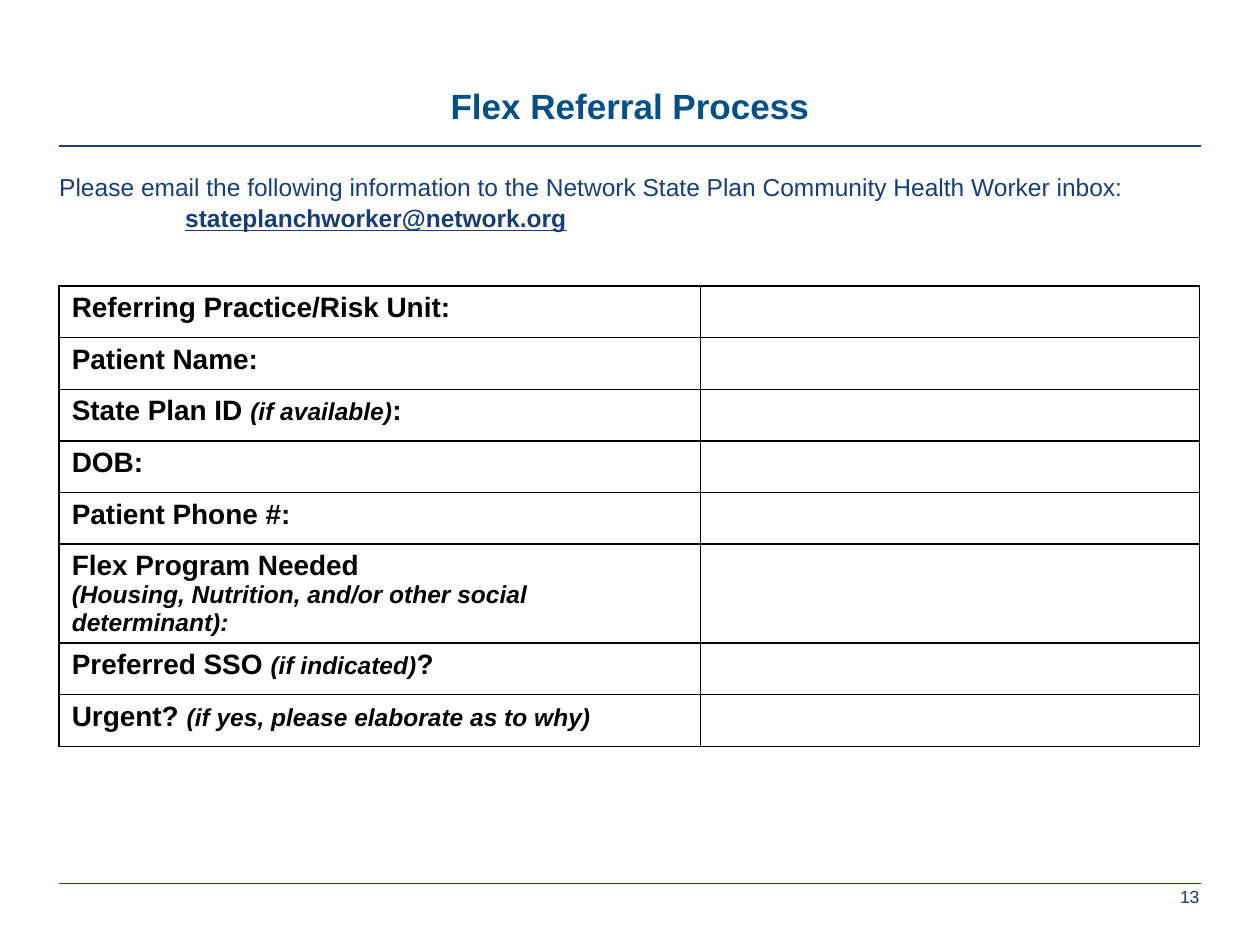
from dataclasses import dataclass

from lxml import etree
from pptx import Presentation
from pptx import util as u
from pptx.dml.color import RGBColor
from pptx.enum import shapes, text
from pptx.oxml import ns


@dataclass(frozen=True)
class Theme:
    font: str = "Arial"
    title_color: str = "004F87"
    body_color: str = "183E75"
    table_color: str = "000000"
    white: str = "FFFFFF"
    title_size: int = 20
    label_size: int = 16
    body_size: int = 14
    number_size: int = 10
    left: float = 0.47
    width: float = 9.06


def add_run(paragraph, content, *, font, size, color, bold=False, italic=False, underline=False):
    run = paragraph.add_run()
    run.text = content
    run.font.name = font
    run.font.size = u.Pt(size)
    run.font.color.rgb = RGBColor.from_string(color)
    run.font.bold = bold
    run.font.italic = italic
    run.font.underline = underline


class SlideBuilder:
    def __init__(self, slide, theme):
        self.slide = slide
        self.theme = theme

    def prepare_frame(self, shape):
        frame = shape.text_frame
        frame.margin_left = frame.margin_top = frame.margin_right = frame.margin_bottom = 0
        frame.word_wrap = True
        frame.auto_size = text.MSO_AUTO_SIZE.NONE
        frame.vertical_anchor = text.MSO_ANCHOR.TOP
        return frame

    def title(self, content, top, height):
        theme = self.theme
        shape = self.slide.shapes.title
        shape.left, shape.top = u.Inches(theme.left), u.Inches(top)
        shape.width, shape.height = u.Inches(theme.width), u.Inches(height)
        paragraph = self.prepare_frame(shape).paragraphs[0]
        paragraph.alignment = text.PP_ALIGN.CENTER
        paragraph.line_spacing = 1.06
        add_run(paragraph, content, font=theme.font, size=theme.title_size,
                color=theme.title_color, bold=True)

    def rule(self, top):
        left, right = u.Inches(self.theme.left), u.Inches(self.theme.left + self.theme.width)
        line = self.slide.shapes.add_connector(
            shapes.MSO_CONNECTOR.STRAIGHT, left, u.Inches(top), right, u.Inches(top))
        line.line.color.rgb = RGBColor.from_string(self.theme.body_color)
        line.line.width = u.Pt(0.75)
        etree.SubElement(line.element.spPr, ns.qn("a:effectLst"))

    def text_box(self, left, top, width, height):
        box = self.slide.shapes.add_textbox(
            u.Inches(left), u.Inches(top), u.Inches(width), u.Inches(height))
        return self.prepare_frame(box)

    def instruction(self, content, address, top, height):
        theme = self.theme
        style = dict(font=theme.font, size=theme.body_size, color=theme.body_color)
        frame = self.text_box(theme.left, top, theme.width, height)
        intro, contact = frame.paragraphs[0], frame.add_paragraph()
        intro.line_spacing = contact.line_spacing = 1.06
        contact._p.get_or_add_pPr().set("marL", str(u.Inches(1)))
        add_run(intro, content, **style)
        add_run(contact, address, bold=True, underline=True, **style)

    def page_number(self, number, left, top, width, height):
        theme = self.theme
        paragraph = self.text_box(left, top, width, height).paragraphs[0]
        paragraph.alignment = text.PP_ALIGN.RIGHT
        add_run(paragraph, str(number), font=theme.font, size=theme.number_size,
                color=theme.body_color)

    def format_cell(self, cell):
        properties = cell._tc.get_or_add_tcPr()
        for side in ("lnL", "lnR", "lnT", "lnB"):
            border = etree.SubElement(properties, ns.qn(f"a:{side}"), w=str(u.Pt(1)))
            fill = etree.SubElement(border, ns.qn("a:solidFill"))
            etree.SubElement(fill, ns.qn("a:srgbClr"), val=self.theme.table_color)
        cell.fill.solid()
        cell.fill.fore_color.rgb = RGBColor.from_string(self.theme.white)

    def form_table(self, rows, top, column_widths, row_height):
        theme = self.theme
        table = self.slide.shapes.add_table(
            len(rows), len(column_widths), u.Inches(theme.left), u.Inches(top),
            u.Inches(sum(column_widths)), u.Inches(row_height * len(rows))).table
        table.first_row = table.horz_banding = False
        for column, width in zip(table.columns, column_widths):
            column.width = u.Inches(width)
        for cell in table.iter_cells():
            self.format_cell(cell)
        for index, lines in enumerate(rows):
            frame = table.cell(index, 0).text_frame
            for position, parts in enumerate(lines):
                paragraph = frame.add_paragraph() if position else frame.paragraphs[0]
                for content in parts:
                    hint = content.startswith("(")
                    add_run(paragraph, content, font=theme.font, color=theme.table_color,
                            size=theme.body_size if hint else theme.label_size,
                            bold=True, italic=hint)


FORM_ROWS = [
    [["Referring Practice/Risk Unit:"]],
    [["Patient Name:"]],
    [["State Plan ID ", "(if available)", ":"]],
    [["DOB:"]],
    [["Patient Phone #:"]],
    [["Flex Program Needed"], ["(Housing, Nutrition, and/or other social determinant):"]],
    [["Preferred SSO ", "(if indicated)", "?"]],
    [["Urgent? ", "(if yes, please elaborate as to why)"]],
]


def main():
    presentation = Presentation()
    presentation.slide_width, presentation.slide_height = u.Inches(10), u.Inches(7.5)
    slide = presentation.slides.add_slide(presentation.slide_layouts[5])
    builder = SlideBuilder(slide, Theme())
    for top in (1.16, 7.01):
        builder.rule(top)
    builder.title("Flex Referral Process", 0.65, 0.42)
    builder.instruction(
        "Please email the following information to the Network State Plan Community Health Worker inbox:",
        "stateplanchworker@network.org", 1.35, 0.65)
    builder.page_number(13, 8.56, 7.03, 0.96, 0.26)
    builder.form_table(FORM_ROWS, 2.27, (5.09, 3.96), 0.41)
    presentation.save("out.pptx")


if __name__ == "__main__":
    main()
